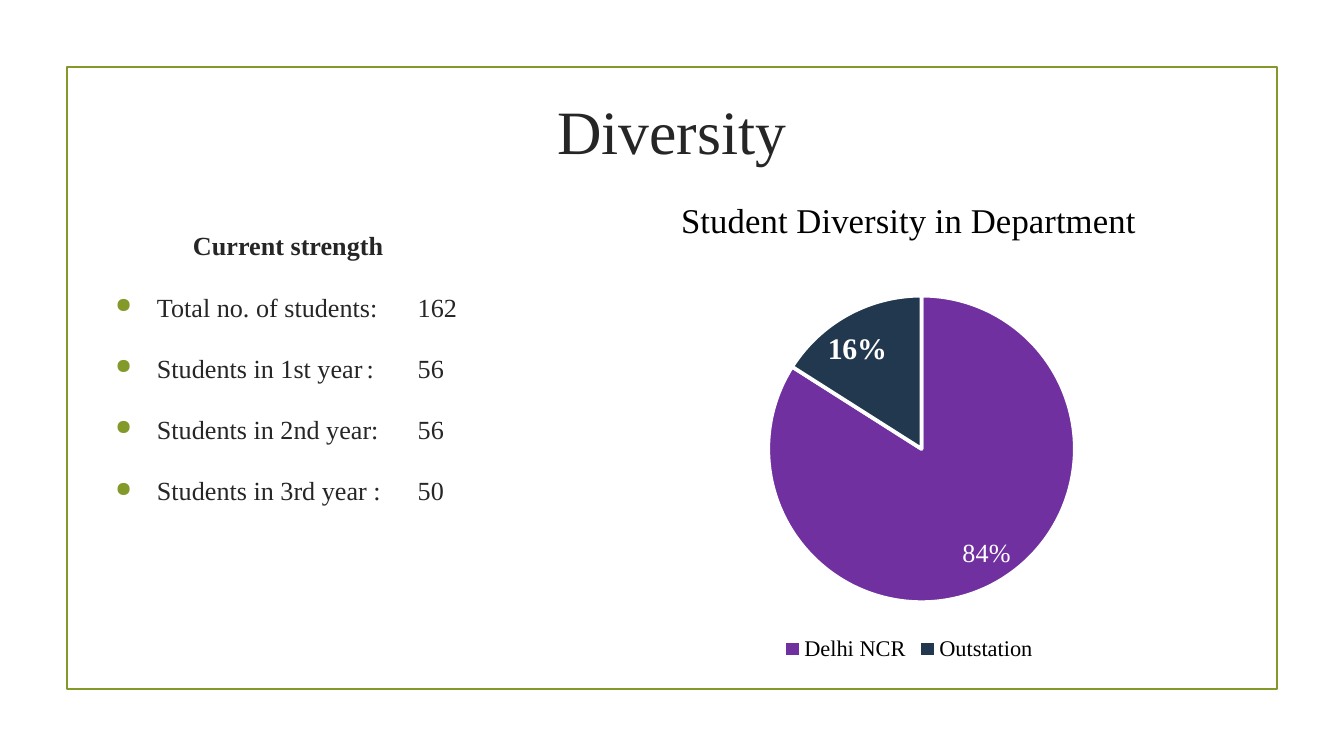
from lxml import etree
from pptx import Presentation
from pptx.chart.data import CategoryChartData
from pptx.dml.color import RGBColor
from pptx.enum.chart import XL_CHART_TYPE, XL_LABEL_POSITION, XL_LEGEND_POSITION
from pptx.enum.shapes import MSO_SHAPE
from pptx.enum.text import MSO_ANCHOR, PP_ALIGN
from pptx.oxml import parse_xml
from pptx.oxml.ns import nsdecls, qn
from pptx.util import Inches, Pt

PIE = XL_CHART_TYPE.PIE
BEST_FIT = XL_LABEL_POSITION.BEST_FIT
BOTTOM = XL_LEGEND_POSITION.BOTTOM
RECTANGLE = MSO_SHAPE.RECTANGLE
TOP = MSO_ANCHOR.TOP
LEFT, CENTER = PP_ALIGN.LEFT, PP_ALIGN.CENTER

THEME = {
    "font": "Times New Roman",
    "green": "83992A", "ink": "262626", "black": "000000", "white": "FFFFFF",
    "purple": "7030A0", "navy": "22384E",
    "title": 33, "body": 14, "chart_title": 18.6, "legend": 12,
    "major_label": 14, "minor_label": 16,
}


def write(frame, text, size="body", ink="ink", bold=False, align=LEFT,
          before=0, bullet=None, tabs=()):
    first = frame.paragraphs[0]
    paragraph = frame.add_paragraph() if first.runs else first
    paragraph.alignment = align
    paragraph.space_before = Pt(before)
    properties = paragraph._p.get_or_add_pPr()
    if bullet:
        properties.set("marL", str(Inches(0.31)))
        properties.set("indent", str(-Inches(0.31)))
        bullet_color = etree.SubElement(properties, qn("a:buClr"))
        etree.SubElement(bullet_color, qn("a:srgbClr"), val=THEME["green"])
        etree.SubElement(properties, qn("a:buSzPct"), val="80000")
        etree.SubElement(properties, qn("a:buChar"), char=bullet)
    if tabs:
        tab_list = etree.SubElement(properties, qn("a:tabLst"))
        for stop in tabs:
            etree.SubElement(tab_list, qn("a:tab"), pos=str(Inches(stop)), algn="l")
    run = paragraph.add_run()
    run.text = text
    style(run.font, size, ink, bold)


def style(font, size, ink, bold=False):
    font.name = THEME["font"]
    font.size = Pt(THEME[size])
    font.bold = bold
    font.color.rgb = RGBColor.from_string(THEME[ink])


deck = Presentation()
deck.slide_width = Inches(10)
deck.slide_height = Inches(10 * 9 / 16)
slide = deck.slides.add_slide(deck.slide_layouts[6])

border = slide.shapes.add_shape(RECTANGLE, Inches(0.5), Inches(0.5), Inches(9), Inches(4.63))
border.shadow.inherit = False
border.fill.background()
border.line.color.rgb = RGBColor.from_string(THEME["green"])
border.line.width = Pt(1.25)

heading = slide.shapes.add_textbox(Inches(0.5), Inches(0.59), Inches(9), Inches(0.69)).text_frame
strength = slide.shapes.add_textbox(Inches(0.76), Inches(1.61), Inches(2.77), Inches(3.28)).text_frame
for frame in (heading, strength):
    frame.word_wrap = True
    frame.vertical_anchor = TOP
    frame.margin_left = frame.margin_right = Inches(0.1)
    frame.margin_top = frame.margin_bottom = Inches(0.1)

write(heading, "Diversity", size="title", align=CENTER)
write(strength, "Current strength", bold=True, align=CENTER)
for line, stops in (
    ("Total no. of students:\t162", (2.25,)),
    ("Students in 1st year\t:\t56", (1.87, 2.25)),
    ("Students in 2nd year:\t56", (2.25,)),
    ("Students in 3rd year :\t50", (2.25,)),
):
    write(strength, line, before=16, bullet="●", tabs=stops)

diversity = CategoryChartData(number_format="0%")
diversity.categories = ["Delhi NCR", "Outstation"]
diversity.add_series("Student Diversity in Department", (0.84, 0.16))
chart = slide.shapes.add_chart(
    PIE, Inches(4.47), Inches(1.28), Inches(4.59), Inches(3.68), diversity).chart
style(chart.font, "legend", "black")

chart.has_title = True
write(chart.chart_title.text_frame, "Student Diversity in Department",
      size="chart_title", ink="black", align=CENTER)

chart.has_legend = True
chart.legend.position = BOTTOM
chart.legend.include_in_layout = False
style(chart.legend.font, "legend", "black")

plot = chart.plots[0]
plot.vary_by_categories = True
plot_area = plot._element.getparent()
title = chart.chart_title._element
for part, target, sizes in (
    (title, "", {"x": 0.12, "y": 0.04}),
    (plot_area, '<c:layoutTarget val="inner"/>', {"x": 0.27, "y": 0.25, "w": 0.5, "h": 0.62}),
):
    for previous in part.findall(qn("c:layout")):
        part.remove(previous)
    values = "".join(f'<c:{key} val="{value}"/>' for key, value in sizes.items())
    part.insert(1 if part is title else 0, parse_xml(
        f'<c:layout {nsdecls("c")}><c:manualLayout>{target}<c:xMode val="edge"/>'
        f'<c:yMode val="edge"/>{values}</c:manualLayout></c:layout>'))

labels = plot.series[0].data_labels
labels.show_value = True
labels.number_format = "0%"
labels.number_format_is_linked = False
labels.position = BEST_FIT
for index, (fill, size, bold) in enumerate((
    ("purple", "major_label", False),
    ("navy", "minor_label", True),
)):
    point = plot.series[0].points[index]
    point.format.fill.solid()
    point.format.fill.fore_color.rgb = RGBColor.from_string(THEME[fill])
    point.format.line.color.rgb = RGBColor.from_string(THEME["white"])
    point.format.line.width = Pt(2)
    point.data_label.position = BEST_FIT
    style(point.data_label.font, size, "white", bold)

deck.save("out.pptx")
